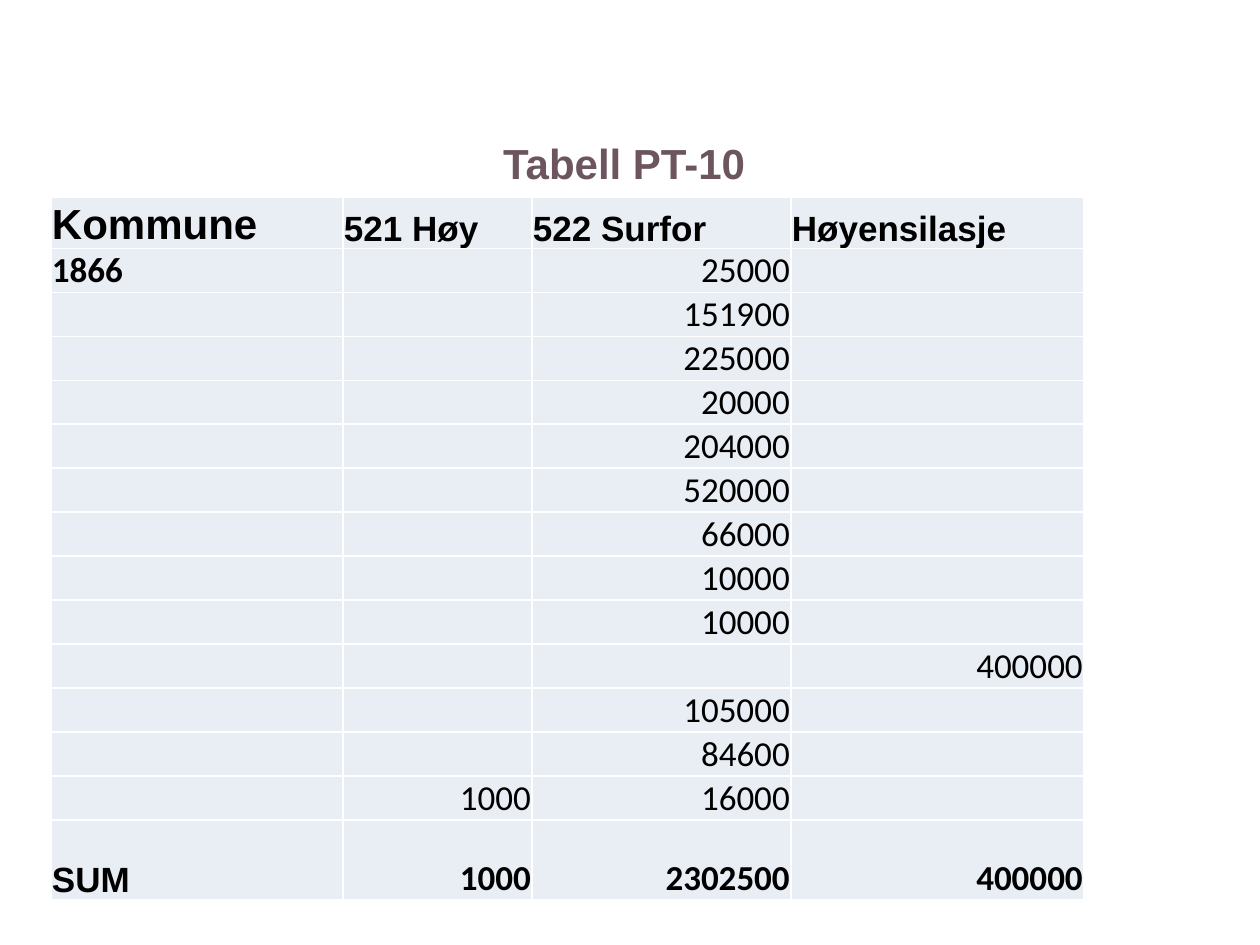
from lxml import etree
from pptx import Presentation
from pptx.dml.color import RGBColor
from pptx.enum.text import MSO_ANCHOR, PP_ALIGN
from pptx.oxml.ns import qn
from pptx.util import Pt

PX = 914400 // 126
LEFT, RIGHT, CENTER = PP_ALIGN.LEFT, PP_ALIGN.RIGHT, PP_ALIGN.CENTER
BOTTOM, MIDDLE = MSO_ANCHOR.BOTTOM, MSO_ANCHOR.MIDDLE
COLORS = {"title": "6D5560", "text": "000000", "cell": "E9EDF4", "line": "FFFFFF"}

HEAD = ["Kommune", "521 Høy", "522 Surfor", "Høyensilasje"]
SURFOR = ["25000", "151900", "225000", "20000", "204000", "520000", "66000",
          "10000", "10000", "", "105000", "84600", "16000"]
rows = [HEAD] + [["", "", num, ""] for num in SURFOR]
rows.append(["SUM", "1000", "2302500", "400000"])
rows[1][0] = "1866"
rows[10][3] = "400000"
rows[13][1] = "1000"
last = len(rows) - 1

widths = [292, 189, 259, 293]
heights = [48] + [44] * len(SURFOR) + [80]


def style(para, face, size, bold, color, align):
    para.alignment = align
    font = para.font
    font.name, font.size, font.bold = face, Pt(size), bold
    font.color.rgb = RGBColor.from_string(COLORS[color])


def edge(cell):
    """Draw a thin line on all four sides; call before the fill is set."""
    props = cell._tc.get_or_add_tcPr()
    for side in ("a:lnL", "a:lnR", "a:lnT", "a:lnB"):
        line = etree.SubElement(props, qn(side), w=str(Pt(1)))
        fill = etree.SubElement(line, qn("a:solidFill"))
        etree.SubElement(fill, qn("a:srgbClr"), val=COLORS["line"])


deck = Presentation()
deck.slide_width, deck.slide_height = 1260 * PX, 945 * PX
slide = deck.slides.add_slide(deck.slide_layouts[6])

title = slide.shapes.add_textbox(63 * PX, 107 * PX, 1134 * PX, 111 * PX).text_frame
title.word_wrap = True
title.vertical_anchor = MIDDLE
title.text = "Tabell PT-10 "
style(title.paragraphs[0], "Arial", 24, True, "title", CENTER)

table = slide.shapes.add_table(len(rows), len(widths), 51 * PX, 197 * PX,
                               sum(widths) * PX, sum(heights) * PX).table
table.first_row = table.horz_banding = False
for col, width in zip(table.columns, widths):
    col.width = width * PX
for row, height in zip(table.rows, heights):
    row.height = height * PX

for r, texts in enumerate(rows):
    for c, text in enumerate(texts):
        cell = table.cell(r, c)
        edge(cell)
        cell.fill.solid()
        cell.fill.fore_color.rgb = RGBColor.from_string(COLORS["cell"])
        cell.margin_left = cell.margin_right = cell.margin_top = PX
        cell.margin_bottom = 0
        cell.vertical_anchor = BOTTOM
        cell.text = text
        face = "Arial" if r == 0 or text == "SUM" else "Calibri"
        size = 24 if r == c == 0 else 20
        bold = r in (0, last) or c == 0
        align = LEFT if r == 0 or c == 0 else RIGHT
        style(cell.text_frame.paragraphs[0], face, size, bold, "text", align)

deck.save("out.pptx")
